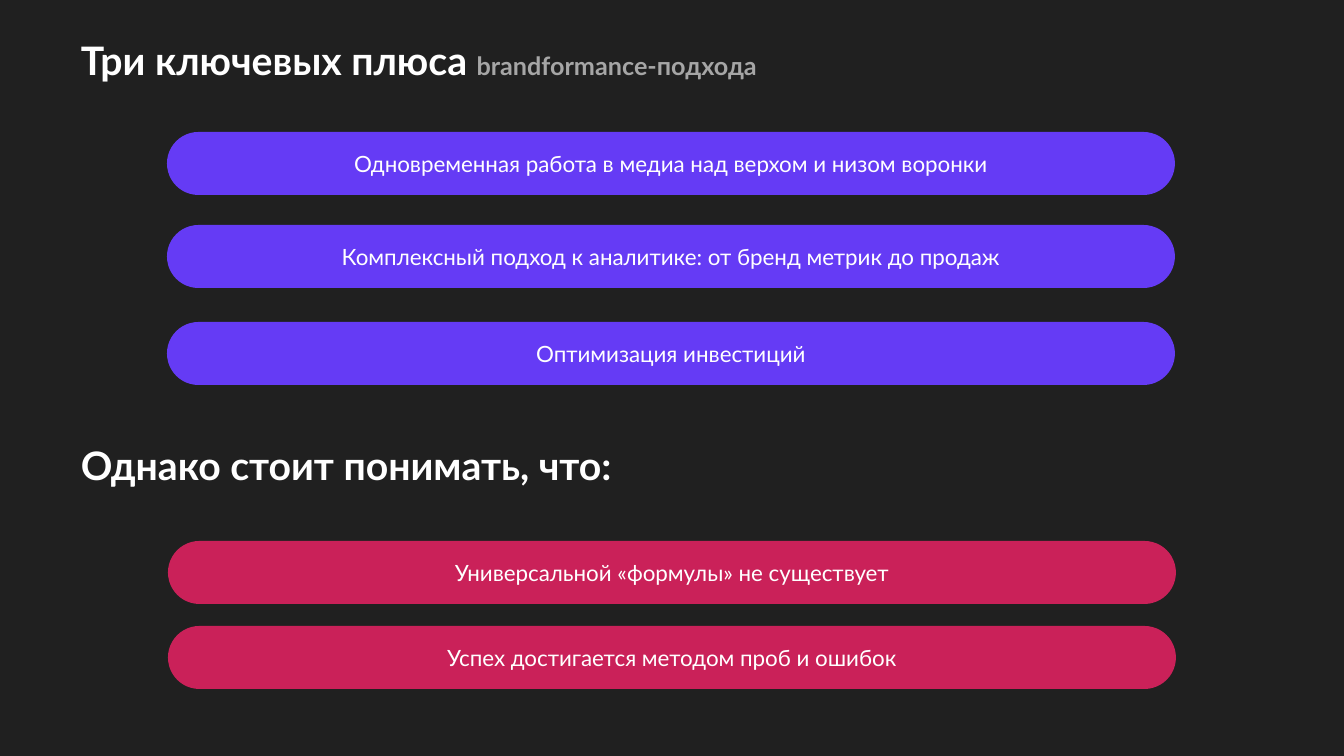
from dataclasses import dataclass

from pptx import Presentation
from pptx.dml.color import RGBColor
from pptx.enum.shapes import MSO_SHAPE
from pptx.enum.text import MSO_ANCHOR, PP_ALIGN
from pptx.util import Emu, Pt

PILL = MSO_SHAPE.ROUNDED_RECTANGLE
MIDDLE = MSO_ANCHOR.MIDDLE
CENTER = PP_ALIGN.CENTER


@dataclass(frozen=True)
class Theme:
    font: str = "Lato"
    background: str = "202020"
    text: str = "FFFFFF"
    muted: str = "A6A6A6"
    plus: str = "653BF5"
    caution: str = "CA2159"
    heading_size: int = 28
    subheading_size: int = 18
    pill_size: int = 16


THEME = Theme()

# Heading: box in px, then runs of (text, size, colour)
HEADINGS = [
    ((68, -6, 1252, 137), [
        ("Три ключевых плюса ", THEME.heading_size, THEME.text),
        ("brandformance-подхода", THEME.subheading_size, THEME.muted),
    ]),
    ((68, 425, 1139, 85), [
        ("Однако стоит понимать, что:", THEME.heading_size, THEME.text),
    ]),
]

# Pill group: colour, left in px, then (top in px, text)
PILL_GROUPS = [
    (THEME.plus, 167, [
        (132, "Одновременная работа в медиа над верхом и низом воронки"),
        (225, "Комплексный подход к аналитике: от бренд метрик до продаж"),
        (322, "Оптимизация инвестиций"),
    ]),
    (THEME.caution, 168, [
        (541, "Универсальной «формулы» не существует"),
        (626, "Успех достигается методом проб и ошибок"),
    ]),
]

SLIDE_W, SLIDE_H = 1344, 756
PILL_W, PILL_H = 1008, 63
HEADING_INSET = 13


def px(n):
    return Emu(round(n * 914400 / 100.8))


def rgb(value):
    return RGBColor.from_string(value)


def add_heading(s, box, runs):
    tf = s.shapes.add_textbox(*map(px, box)).text_frame
    tf.word_wrap = True
    tf.vertical_anchor = MIDDLE
    tf.margin_left = tf.margin_right = px(HEADING_INSET)
    tf.margin_top = tf.margin_bottom = px(HEADING_INSET)
    p = tf.paragraphs[0]
    p.line_spacing = 0.9
    p.font.name = THEME.font
    p.font.bold = True
    for text, size, color in runs:
        r = p.add_run()
        r.text = text
        r.font.size = Pt(size)
        r.font.color.rgb = rgb(color)


def add_pill(s, left, top, color, text):
    sp = s.shapes.add_shape(PILL, *map(px, (left, top, PILL_W, PILL_H)))
    sp.adjustments[0] = 0.5
    sp.shadow.inherit = False
    sp.fill.solid()
    sp.fill.fore_color.rgb = rgb(color)
    sp.line.fill.background()
    tf = sp.text_frame
    tf.word_wrap = True
    tf.vertical_anchor = MIDDLE
    p = tf.paragraphs[0]
    p.text = text
    p.alignment = CENTER
    p.font.name = THEME.font
    p.font.size = Pt(THEME.pill_size)
    p.font.color.rgb = rgb(THEME.text)


def main():
    prs = Presentation()
    prs.slide_width, prs.slide_height = px(SLIDE_W), px(SLIDE_H)
    s = prs.slides.add_slide(prs.slide_layouts[6])
    s.background.fill.solid()
    s.background.fill.fore_color.rgb = rgb(THEME.background)
    for box, runs in HEADINGS:
        add_heading(s, box, runs)
    for color, left, pills in PILL_GROUPS:
        for top, text in pills:
            add_pill(s, left, top, color, text)
    prs.save("out.pptx")


if __name__ == "__main__":
    main()
